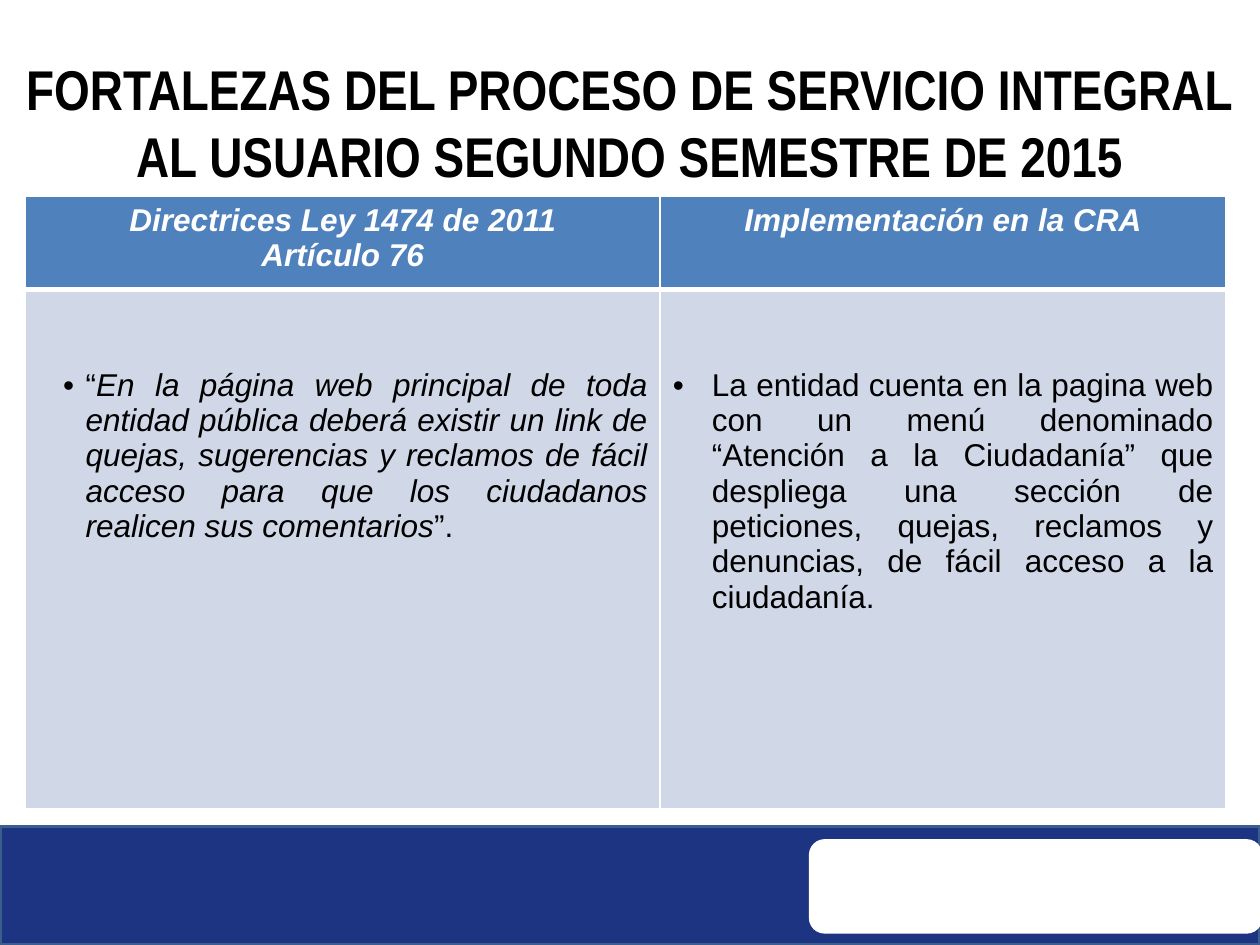
from lxml import etree
from pptx import Presentation
from pptx.dml.color import RGBColor
from pptx.enum.shapes import MSO_SHAPE as Shape
from pptx.enum.text import MSO_AUTO_SIZE as AutoSize, PP_ALIGN as Align
from pptx.oxml.ns import qn
from pptx.util import Inches, Pt


def color(hex_string):
    return RGBColor.from_string(hex_string)


def set_borders(cell, widths):
    """Draw white cell borders; widths maps the sides L, R, T, B to points."""
    properties = cell._tc.get_or_add_tcPr()
    for index, side in enumerate("LRTB"):
        line = etree.Element(qn(f"a:ln{side}"), w=str(Pt(widths[side])))
        fill = etree.SubElement(line, qn("a:solidFill"))
        etree.SubElement(fill, qn("a:srgbClr"), val="FFFFFF")
        properties.insert(index, line)


presentation = Presentation()
presentation.slide_width = Inches(10)
presentation.slide_height = Inches(7.5)
slide = presentation.slides.add_slide(presentation.slide_layouts[6])

# Footer band and its white panel
band = slide.shapes.add_shape(
    Shape.RECTANGLE, Inches(0), Inches(6.56), Inches(10), Inches(0.94))
band.fill.solid()
band.fill.fore_color.rgb = color("1C3481")
band.line.color.rgb = color("3A5F8C")
band.line.width = Pt(2)
band.shadow.inherit = False

panel = slide.shapes.add_shape(
    Shape.ROUNDED_RECTANGLE, Inches(6.42), Inches(6.66), Inches(3.6), Inches(0.75))
panel.fill.solid()
panel.fill.fore_color.rgb = color("FFFFFF")
panel.line.fill.background()
panel.shadow.inherit = False

# Title
title = slide.shapes.add_textbox(Inches(0), Inches(0.38), Inches(10), Inches(1.18))
title.text_frame.word_wrap = True
title.text_frame.auto_size = AutoSize.SHAPE_TO_FIT_TEXT
paragraph = title.text_frame.paragraphs[0]
paragraph.alignment = Align.CENTER
run = paragraph.add_run()
run.text = "FORTALEZAS DEL PROCESO DE SERVICIO INTEGRAL AL USUARIO SEGUNDO SEMESTRE DE 2015"
run.font.name = "Arial Narrow"
run.font.size = Pt(32)
run.font.bold = True
run.font.color.rgb = color("000000")

# Table
table = slide.shapes.add_table(
    2, 2, Inches(0.2), Inches(1.56), Inches(9.53), Inches(4.86)).table
for column, width in zip(table.columns, (5.04, 4.49)):
    column.width = Inches(width)
for row, height in zip(table.rows, (0.74, 4.12)):
    row.height = Inches(height)

headers = [
    ["Directrices Ley 1474 de 2011", "Artículo 76"],
    ["Implementación en la CRA"],
]
# Each body cell: left margin, hanging indent, (text, italic) runs
bodies = [
    (0.38, 0.18, [
        ("“", False),
        ("En la página web principal de toda entidad pública deberá existir un link "
         "de quejas, sugerencias y reclamos de fácil acceso para que los ciudadanos "
         "realicen sus comentarios", True),
        ("”.", False),
    ]),
    (0.31, 0.31, [
        ("La entidad cuenta en la pagina web con un menú denominado “Atención a la "
         "Ciudadanía” que despliega una sección de peticiones, quejas, reclamos y "
         "denuncias, de fácil acceso a la ciudadanía.", False),
    ]),
]

for column_index, (header_lines, body) in enumerate(zip(headers, bodies)):
    header_cell = table.cell(0, column_index)
    header_cell.fill.solid()
    header_cell.fill.fore_color.rgb = color("4F81BD")
    set_borders(header_cell, {"L": 1, "R": 1, "T": 1, "B": 3})
    for line_index, text in enumerate(header_lines):
        frame = header_cell.text_frame
        paragraph = frame.add_paragraph() if line_index else frame.paragraphs[0]
        paragraph.alignment = Align.CENTER
        run = paragraph.add_run()
        run.text = text
        run.font.name = "Arial"
        run.font.size = Pt(18)
        run.font.bold = run.font.italic = True
        run.font.color.rgb = color("FFFFFF")

    left_margin, hanging, runs = body
    body_cell = table.cell(1, column_index)
    body_cell.fill.solid()
    body_cell.fill.fore_color.rgb = color("D0D8E8")
    body_cell.margin_top = Inches(0.62)
    set_borders(body_cell, {"L": 1, "R": 1, "T": 3, "B": 1})
    paragraph = body_cell.text_frame.paragraphs[0]
    paragraph.alignment = Align.JUSTIFY
    properties = paragraph._p.get_or_add_pPr()
    properties.set("marL", str(Inches(left_margin)))
    properties.set("indent", str(-Inches(hanging)))
    etree.SubElement(properties, qn("a:buFont"), typeface="Arial")
    etree.SubElement(properties, qn("a:buChar"), char="•")
    for text, italic in runs:
        run = paragraph.add_run()
        run.text = text
        run.font.name = "Arial"
        run.font.size = Pt(18)
        run.font.bold = False
        run.font.italic = italic
        run.font.color.rgb = color("000000")

presentation.save("out.pptx")
